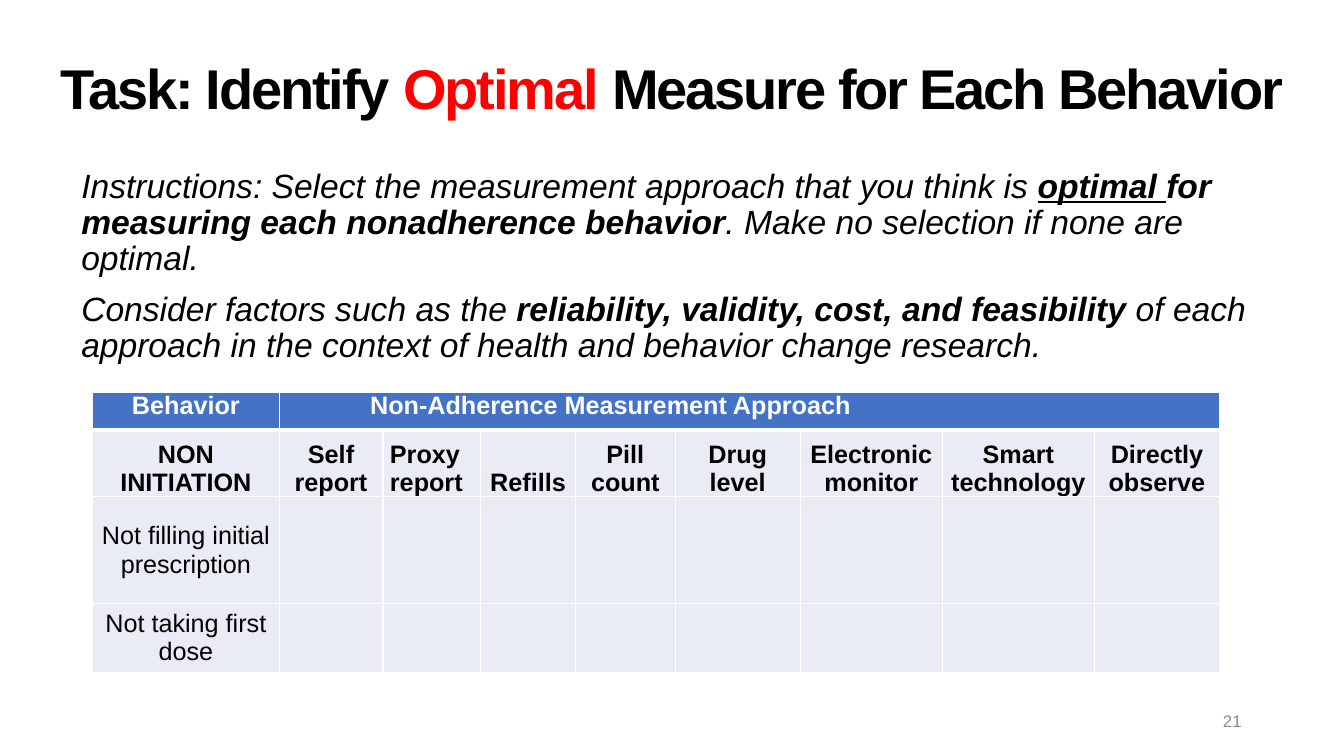
from lxml import etree
from pptx import Presentation
from pptx.dml.color import RGBColor
from pptx.enum.text import MSO_ANCHOR, PP_ALIGN
from pptx.oxml.ns import qn
from pptx.util import Pt

LEFT, CENTER, RIGHT = PP_ALIGN.LEFT, PP_ALIGN.CENTER, PP_ALIGN.RIGHT
TOP, MIDDLE, BOTTOM = MSO_ANCHOR.TOP, MSO_ANCHOR.MIDDLE, MSO_ANCHOR.BOTTOM

COLORS = {"text": "000000", "accent": "FF0000", "number": "8C8C8C",
          "header": "4472C4", "body": "E9EBF5", "white": "FFFFFF"}
FONT = "Arial"

TITLE = [("Task: Identify ", "text"), ("Optimal", "accent"),
         (" Measure for Each Behavior", "text")]
# Each run: text, bold, underlined
INSTRUCTIONS = [
    [("Instructions: Select the measurement approach that you think is ", False, False),
     ("optimal ", True, True),
     ("for measuring each nonadherence behavior", True, False),
     (". Make no selection if none are optimal.", False, False)],
    [("Consider factors such as the ", False, False),
     ("reliability, validity, cost, and feasibility ", True, False),
     ("of each approach in the context of health and behavior change research.",
      False, False)],
]
APPROACHES = ["NON\nINITIATION", "Self report", "Proxy report", "Refills", "Pill count",
              "Drug level", "Electronic monitor", "Smart technology", "Directly observe"]
BEHAVIORS = ["Not filling initial prescription", "Not taking first dose"]
COLUMN_WIDTHS = [133.2, 74.2, 69.8, 67.7, 71.3, 89.3, 101.5, 108.7, 89.3]
ROW_HEIGHTS = [27.4, 47.5, 76.3, 49]
CELL_INSET = 5
HEADING_INDENT = 65


def rgb(name):
    return RGBColor.from_string(COLORS[name])


def style(paragraph, size, color="text", align=LEFT, bold=False):
    paragraph.alignment = align
    font = paragraph.font
    font.name, font.size, font.bold = FONT, Pt(size), bold
    font.color.rgb = rgb(color)


def add_frame(slide, box, anchor=TOP):
    frame = slide.shapes.add_textbox(*map(Pt, box)).text_frame
    frame.word_wrap = True
    frame.vertical_anchor = anchor
    return frame


def add_title(slide, box):
    heading = add_frame(slide, box, MIDDLE).paragraphs[0]
    style(heading, 40, align=CENTER, bold=True)
    heading.line_spacing = 0.9
    for words, color in TITLE:
        run = heading.add_run()
        run.text = words
        run.font.color.rgb = rgb(color)
        run.font._element.set("spc", "-150")


def add_instructions(slide, box):
    frame = add_frame(slide, box)
    for index, runs in enumerate(INSTRUCTIONS):
        paragraph = frame.add_paragraph() if index else frame.paragraphs[0]
        style(paragraph, 24)
        paragraph.font.italic = True
        paragraph.line_spacing = 0.9
        paragraph.space_before = Pt(10)
        for words, bold, underline in runs:
            run = paragraph.add_run()
            run.text = words
            run.font.bold, run.font.underline = bold, underline


def set_borders(cell, bottom):
    """Draw white cell borders, 1 pt wide except for the bottom one."""
    properties = cell._tc.get_or_add_tcPr()
    for index, (side, width) in enumerate(
            [("L", 1), ("R", 1), ("T", 1), ("B", bottom)]):
        line = etree.Element(qn(f"a:ln{side}"), w=str(Pt(width)))
        fill = etree.SubElement(line, qn("a:solidFill"))
        etree.SubElement(fill, qn("a:srgbClr"), val=COLORS["white"])
        properties.insert(index, line)


def fill_cell(cell, words, anchor, color="text", align=CENTER, bold=True):
    cell.text = words
    cell.vertical_anchor = anchor
    for paragraph in cell.text_frame.paragraphs:
        style(paragraph, 18, color, align, bold)


def add_measures_table(slide, left, top):
    table = slide.shapes.add_table(
        len(ROW_HEIGHTS), len(COLUMN_WIDTHS), Pt(left), Pt(top),
        Pt(sum(COLUMN_WIDTHS)), Pt(sum(ROW_HEIGHTS))).table
    for column, width in zip(table.columns, COLUMN_WIDTHS):
        column.width = Pt(width)
    for index, (row, height) in enumerate(zip(table.rows, ROW_HEIGHTS)):
        row.height = Pt(height)
        for cell in row.cells:
            cell.margin_left = cell.margin_right = Pt(CELL_INSET)
            cell.margin_top = cell.margin_bottom = 0
            cell.fill.solid()
            cell.fill.fore_color.rgb = rgb("body" if index else "header")
            set_borders(cell, bottom=1 if index else 3)

    fill_cell(table.cell(0, 0), "Behavior", TOP, "white")
    heading = table.cell(0, 1)
    heading.merge(table.cell(0, len(COLUMN_WIDTHS) - 1))
    heading.margin_left = Pt(HEADING_INDENT)
    fill_cell(heading, "Non-Adherence Measurement Approach", TOP, "white", LEFT)
    for column, approach in enumerate(APPROACHES):
        align = LEFT if approach == "Proxy report" else CENTER
        fill_cell(table.cell(1, column), approach, BOTTOM, align=align)
    for row, behavior in enumerate(BEHAVIORS, start=2):
        fill_cell(table.cell(row, 0), behavior, MIDDLE, bold=False)


def add_slide_number(slide, box):
    number = add_frame(slide, box, MIDDLE).paragraphs[0]
    number.text = "21"
    style(number, 12, "number", RIGHT)


def main():
    deck = Presentation()
    deck.slide_width, deck.slide_height = Pt(960), Pt(540)
    slide = deck.slides.add_slide(deck.slide_layouts[6])
    add_title(slide, (0, 13, 960, 104.4))
    add_slide_number(slide, (678, 500.4, 216, 28.8))
    add_instructions(slide, (51, 117.4, 858, 148.3))
    add_measures_table(slide, 66.2, 280)
    deck.save("out.pptx")


if __name__ == "__main__":
    main()
